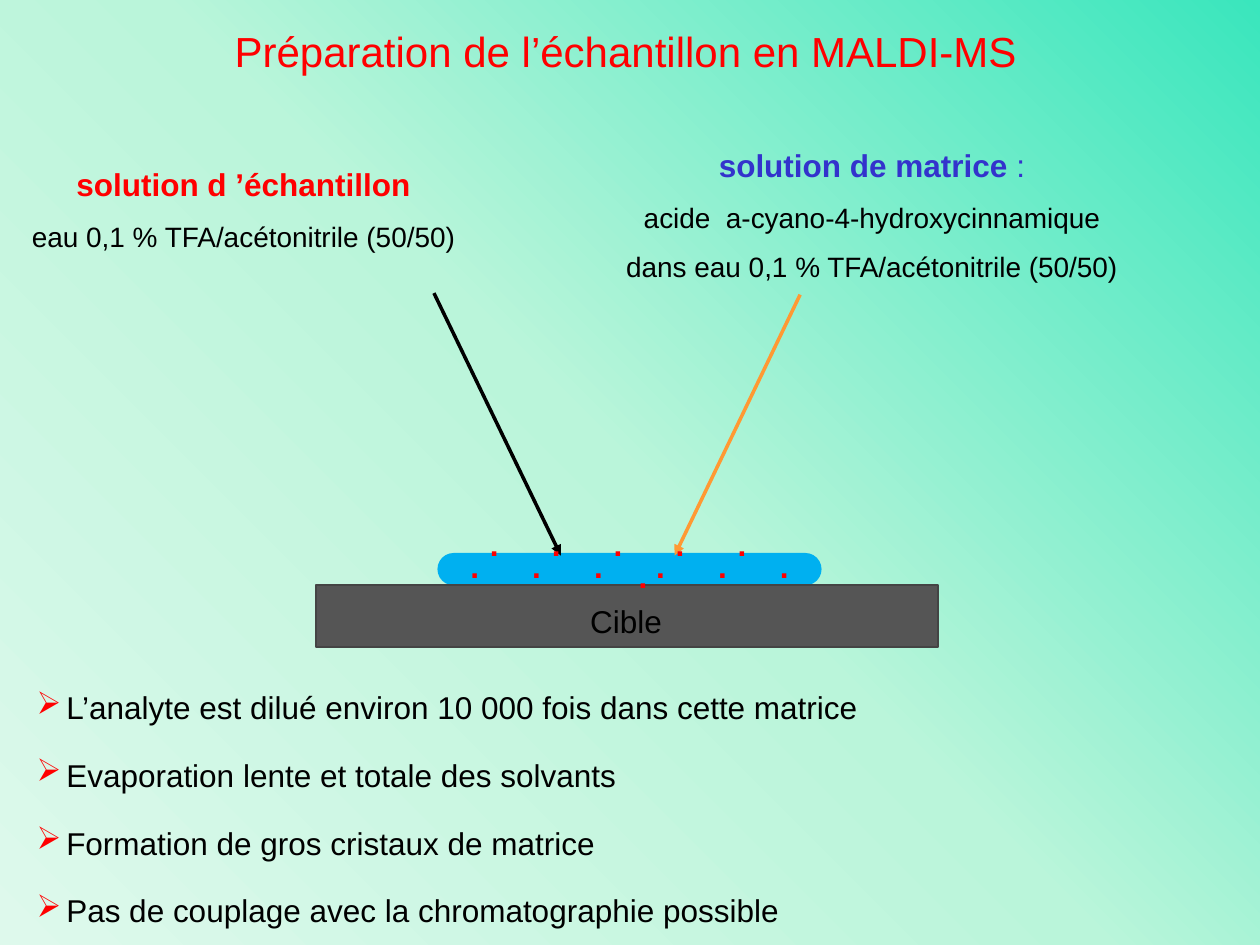
from copy import deepcopy

from pptx import Presentation
from pptx.dml.color import RGBColor
from pptx.enum.shapes import MSO_CONNECTOR as Connector, MSO_SHAPE as Shape
from pptx.enum.text import MSO_ANCHOR as Anchor, PP_ALIGN as Align
from pptx.oxml.ns import qn
from pptx.util import Pt

BLACK = RGBColor(0x00, 0x00, 0x00)
RED = RGBColor(0xFF, 0x00, 0x00)
INDIGO = RGBColor(0x33, 0x33, 0xCC)
ORANGE = RGBColor(0xFF, 0x99, 0x33)
DROP_BLUE = RGBColor(0x00, 0xB0, 0xF0)
PLATE_GREY = RGBColor(0x55, 0x55, 0x55)
PLATE_EDGE = RGBColor(0x44, 0x44, 0x44)
MINT = RGBColor(0x3A, 0xE6, 0xBD)
PALE_MINT = RGBColor(0xBA, 0xF5, 0xDA)
MINT_WHITE = RGBColor(0xDE, 0xF9, 0xEC)

CRYSTAL_COUNT = 6
CRYSTAL_PITCH = 35.38


def add_child(parent, tag, **attributes):
    child = parent.makeelement(qn(tag), attributes)
    parent.append(child)
    return child


class SlideBuilder:
    font = "Arial"

    def __init__(self, slide):
        self.slide = slide

    def background(self, colours, angle):
        fill = self.slide.background.fill
        fill.gradient()
        fill.gradient_angle = angle
        stops = self.slide.element.find(".//" + qn("a:gsLst"))
        stops.insert(1, deepcopy(stops[0]))
        for index, (stop, colour) in enumerate(zip(fill.gradient_stops, colours)):
            stop.color.rgb = colour
            stop.position = index / (len(colours) - 1)

    def block(self, kind, box, fill, edge):
        shape = self.slide.shapes.add_shape(kind, *map(Pt, box))
        shape.shadow.inherit = False
        shape.fill.solid()
        shape.fill.fore_color.rgb = fill
        shape.line.color.rgb = edge
        shape.line.width = Pt(1)
        return shape

    def arrow(self, start, end, colour):
        connector = self.slide.shapes.add_connector(
            Connector.STRAIGHT, *map(Pt, start + end))
        connector.line.color.rgb = colour
        connector.line.width = Pt(2)
        properties = connector._element.spPr
        add_child(properties.find(qn("a:ln")), "a:tailEnd", type="triangle")
        add_child(properties, "a:effectLst")

    def text_frame(self, box, wrap=False):
        frame = self.slide.shapes.add_textbox(*map(Pt, box)).text_frame
        self.set_margins(frame, wrap)
        return frame

    def set_margins(self, frame, wrap=False):
        frame.word_wrap = wrap
        frame.margin_left = frame.margin_right = Pt(6.5)
        frame.margin_top = frame.margin_bottom = Pt(3.5)

    def fill_text(self, frame, lines, before=0, align=Align.CENTER):
        """Fill the frame; each line is a list of (text, size, colour, bold)."""
        frame.text = "\n" * (len(lines) - 1)
        for paragraph, line in zip(frame.paragraphs, lines):
            paragraph.alignment = align
            paragraph.space_before = Pt(before)
            for text, size, colour, bold in line:
                run = paragraph.add_run()
                run.text = text
                run.font.name = self.font
                run.font.size = Pt(size)
                run.font.bold = bold
                run.font.color.rgb = colour

    def label(self, box, lines):
        self.fill_text(self.text_frame(box), lines, before=9.3)

    def bullets(self, box, items):
        frame = self.text_frame(box, wrap=True)
        lines = [[(item, 18, BLACK, False)] for item in items]
        self.fill_text(frame, lines, before=17.2, align=Align.JUSTIFY)
        frame.paragraphs[0].space_before = Pt(0)
        for paragraph in frame.paragraphs:
            props = paragraph._p.get_or_add_pPr()
            props.set("marL", str(Pt(17)))
            props.set("indent", str(-Pt(17)))
            add_child(add_child(props, "a:buClr"), "a:srgbClr", val=str(RED))
            add_child(props, "a:buChar", char="➢")

    def crystals(self, frame):
        """Put a row of red dots on equal tab stops."""
        dots = "\t".join("." * CRYSTAL_COUNT)
        self.fill_text(frame, [[(dots, 18, RED, True)]])
        paragraph = frame.paragraphs[0]
        paragraph.line_spacing = 0.86
        tabs = add_child(paragraph._p.get_or_add_pPr(), "a:tabLst")
        for step in range(1, CRYSTAL_COUNT):
            add_child(tabs, "a:tab", pos=str(Pt(step * CRYSTAL_PITCH)), algn="l")


def main():
    deck = Presentation()
    deck.slide_width, deck.slide_height = Pt(720), Pt(540)
    page = SlideBuilder(deck.slides.add_slide(deck.slide_layouts[6]))
    page.background([MINT, PALE_MINT, MINT_WHITE], angle=225)

    drop = page.block(Shape.ROUNDED_RECTANGLE, (250.5, 316.5, 218.5, 17.5),
                      DROP_BLUE, DROP_BLUE)
    drop.adjustments[0] = 0.5
    page.set_margins(drop.text_frame)
    drop.text_frame.vertical_anchor = Anchor.MIDDLE
    page.crystals(drop.text_frame)

    page.block(Shape.RECTANGLE, (180.5, 334.5, 355.5, 35.5), PLATE_GREY, PLATE_EDGE)
    page.arrow((457.2, 168.4), (385.5, 317.5), ORANGE)
    page.arrow((248, 167.5), (320.5, 317.5), BLACK)

    page.label((349.5, 80, 297.5, 83), [
        [("solution de matrice", 18, INDIGO, True), (" :", 18, INDIGO, False)],
        [("acide  a-cyano-4-hydroxycinnamique", 16, BLACK, False)],
        [("dans eau 0,1 % TFA/acétonitrile (50/50)", 16, BLACK, False)],
    ])
    page.label((330.5, 340.5, 54.5, 28), [[("Cible", 18, BLACK, False)]])
    page.label((10.2, 91, 258, 55.5), [
        [("solution d ’échantillon", 18, RED, True)],
        [("eau 0,1 % TFA/acétonitrile (50/50)", 16, BLACK, False)],
    ])
    page.bullets((14.4, 389.5, 690, 146), [
        "L’analyte est dilué environ 10 000 fois dans cette matrice",
        "Evaporation lente et totale des solvants",
        "Formation de gros cristaux de matrice",
        "Pas de couplage avec la chromatographie possible",
    ])
    page.label((125.5, 11, 464, 36), [
        [("Préparation de l’échantillon en MALDI-MS", 24, RED, False)],
    ])
    page.crystals(page.text_frame((273.5, 299.5, 188, 25), wrap=True))

    deck.save("out.pptx")


if __name__ == "__main__":
    main()
